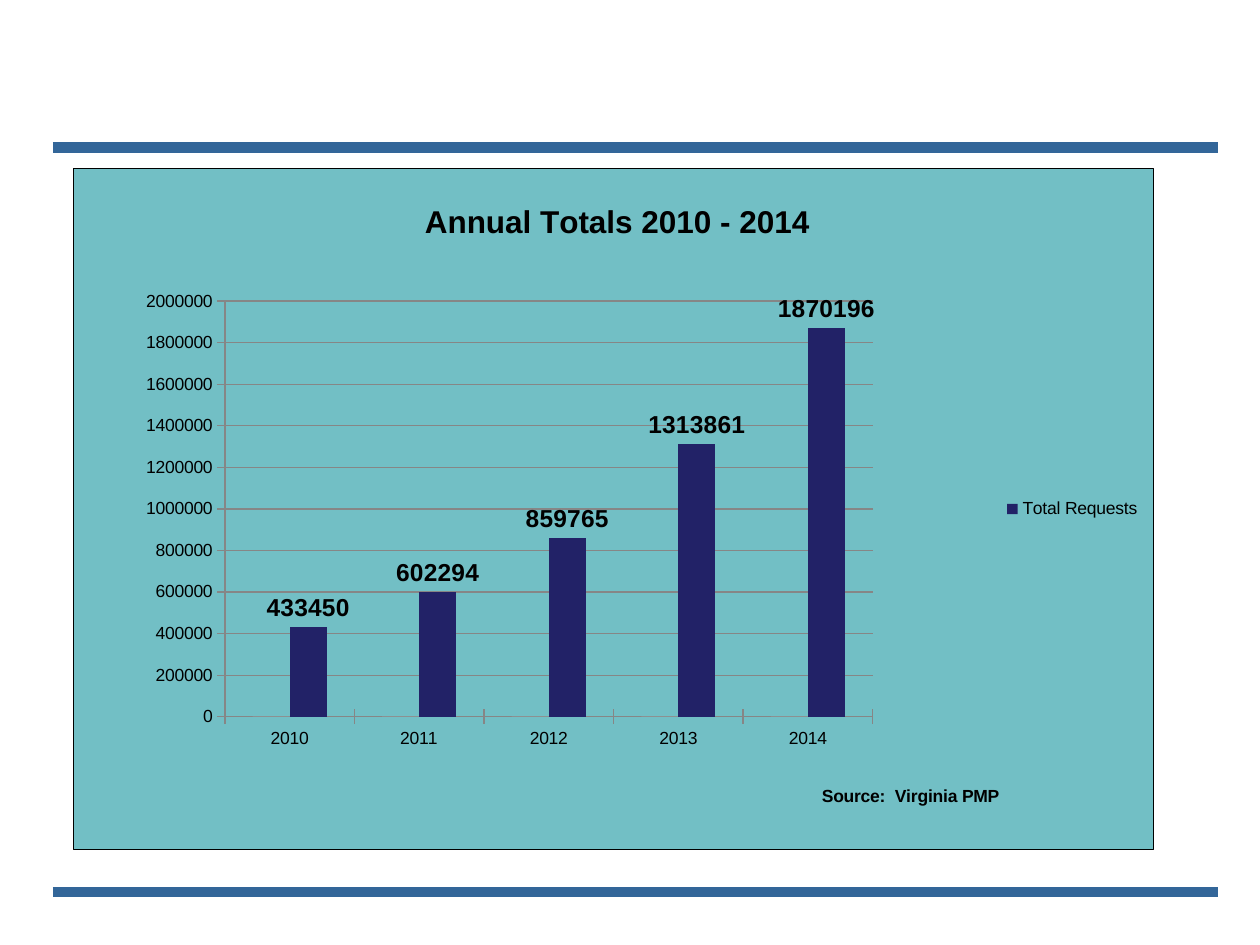
import pptx
import pptx.chart.data
import pptx.dml.color
import pptx.enum.chart
import pptx.enum.shapes
import pptx.oxml
import pptx.oxml.ns
import pptx.util
from pptx.util import Inches, Pt

RGBColor = pptx.dml.color.RGBColor
RULE_BLUE = RGBColor(0x33, 0x66, 0x99)
TEAL = RGBColor(0x72, 0xBF, 0xC5)
PALE = RGBColor(0xBB, 0xE0, 0xE3)
NAVY = RGBColor(0x22, 0x22, 0x67)
GRAY = RGBColor(0x86, 0x86, 0x86)
BLACK = RGBColor(0, 0, 0)
FONT = "Arial"
YEARS = ["2010", "2011", "2012", "2013", "2014"]
REQUESTS = [433450, 602294, 859765, 1313861, 1870196]


def xml(markup):
    return pptx.oxml.parse_xml(markup.replace(">", " " + pptx.oxml.ns.nsdecls("c", "a") + ">", 1))


def set_font(font, size, bold=False):
    font.name = FONT
    font.size = Pt(size)
    font.bold = bold
    font.color.rgb = BLACK


def add_rule(slide, top):
    rule = slide.shapes.add_connector(
        pptx.enum.shapes.MSO_CONNECTOR.STRAIGHT,
        Inches(0.42), Inches(top), Inches(9.67), Inches(top))
    rule.line.color.rgb = RULE_BLUE
    rule.line.width = Pt(6)
    rule._element.spPr.append(xml("<a:effectLst></a:effectLst>"))


def manual_layout(left, top, size=None):
    modes = '<c:xMode val="edge"/><c:yMode val="edge"/>'
    place = f'<c:x val="{left}"/><c:y val="{top}"/>'
    target = ""
    if size:
        target = '<c:layoutTarget val="inner"/>'
        place += f'<c:w val="{size[0]}"/><c:h val="{size[1]}"/>'
    return xml(f"<c:layout><c:manualLayout>{target}{modes}{place}</c:manualLayout></c:layout>")


def write_title(title, text, size, left, top):
    span = title.text_frame.paragraphs[0].add_run()
    span.text = text
    set_font(span.font, size, True)
    element = title._element
    for old in element.findall(pptx.oxml.ns.qn("c:layout")):
        element.remove(old)
    element.find(pptx.oxml.ns.qn("c:tx")).addnext(manual_layout(left, top))


def style_background(chart):
    area = xml(
        f'<c:spPr><a:solidFill><a:srgbClr val="{TEAL}"/></a:solidFill>'
        f'<a:ln w="{Pt(0.75)}"><a:solidFill><a:srgbClr val="{BLACK}"/></a:solidFill></a:ln></c:spPr>')
    chart._chartSpace.find(pptx.oxml.ns.qn("c:chart")).addnext(area)


def style_axis(axis):
    axis.major_tick_mark = pptx.enum.chart.XL_TICK_MARK.CROSS
    axis.format.line.color.rgb = GRAY
    set_font(axis.tick_labels.font, 10)


def style_legend(chart):
    chart.has_legend = True
    legend = chart.legend
    legend.position = pptx.enum.chart.XL_LEGEND_POSITION.RIGHT
    legend.include_in_layout = False
    set_font(legend.font, 10)
    hidden = xml('<c:legendEntry><c:idx val="0"/><c:delete val="1"/></c:legendEntry>')
    legend._element.find(pptx.oxml.ns.qn("c:legendPos")).addnext(hidden)


def style_columns(plot):
    plot.gap_width = 150
    plot.overlap = 0
    plot.vary_by_categories = False
    for series, color in zip(plot.series, (PALE, NAVY)):
        series.format.fill.solid()
        series.format.fill.fore_color.rgb = color
    labels = plot.series[1].data_labels
    labels.show_value = True
    labels.position = pptx.enum.chart.XL_LABEL_POSITION.OUTSIDE_END
    set_font(labels.font, 14, True)


def add_requests_chart(slide):
    data = pptx.chart.data.CategoryChartData()
    data.categories = YEARS
    data.add_series("Series 1", [0] * len(YEARS))
    data.add_series("Total Requests", REQUESTS)
    chart = slide.shapes.add_chart(
        pptx.enum.chart.XL_CHART_TYPE.COLUMN_CLUSTERED,
        Inches(0.58), Inches(1.33), Inches(8.58), Inches(5.42), data).chart
    set_font(chart.font, 10)
    style_background(chart)
    chart.has_title = True
    write_title(chart.chart_title, "Annual Totals 2010 - 2014", 18, 0.32, 0.04)
    style_axis(chart.category_axis)
    style_axis(chart.value_axis)
    write_title(chart.category_axis.axis_title, "Source:  Virginia PMP", 10, 0.69, 0.9)
    chart.value_axis.maximum_scale = 2000000
    chart.value_axis.minimum_scale = 0
    chart.value_axis.major_unit = 200000
    chart.value_axis.has_major_gridlines = True
    chart.value_axis.major_gridlines.format.line.color.rgb = GRAY
    style_columns(chart.plots[0])
    style_legend(chart)
    plot_area = chart._chartSpace.chart.plotArea
    for old in plot_area.findall(pptx.oxml.ns.qn("c:layout")):
        plot_area.remove(old)
    plot_area.insert(0, manual_layout(0.14, 0.195, (0.6, 0.61)))


def main():
    deck = pptx.Presentation()
    deck.slide_width = Inches(10)
    deck.slide_height = Inches(7.5)
    slide = deck.slides.add_slide(deck.slide_layouts[6])
    for top in (1.17, 7.08):
        add_rule(slide, top)
    add_requests_chart(slide)
    deck.save("out.pptx")


if __name__ == "__main__":
    main()
